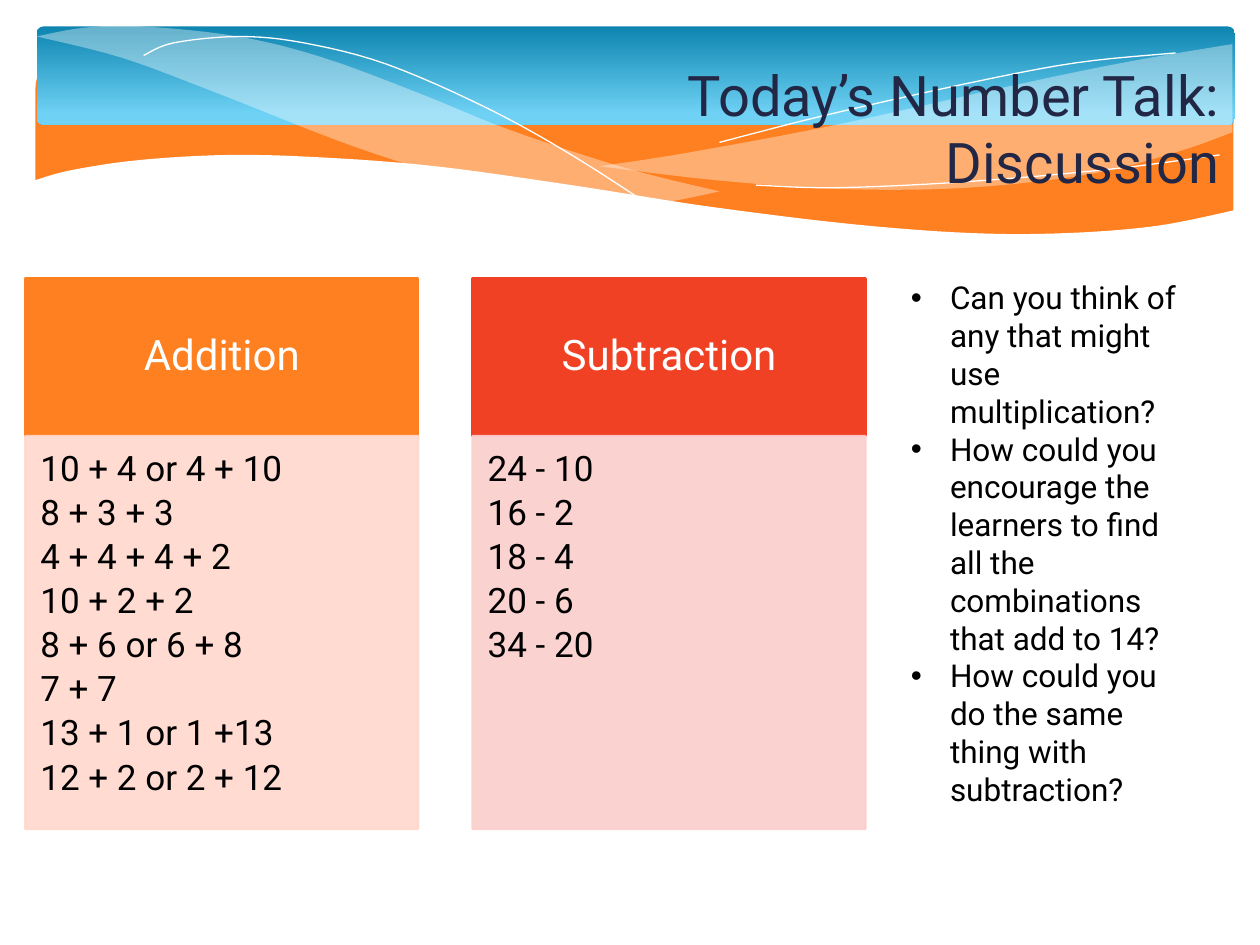
from dataclasses import dataclass

import pptx
import pptx.dml.color
import pptx.enum.shapes
import pptx.enum.text
import pptx.oxml
import pptx.oxml.ns
import pptx.util

Inches = pptx.util.Inches
Pt = pptx.util.Pt
Shape = pptx.enum.shapes.MSO_SHAPE
Align = pptx.enum.text.PP_ALIGN
Anchor = pptx.enum.text.MSO_ANCHOR
AutoSize = pptx.enum.text.MSO_AUTO_SIZE


@dataclass(frozen=True)
class Theme:
    """Colours, type sizes and font of the slide."""
    font: str = "Roboto"
    title: str = "212745"
    ink: str = "000000"
    white: str = "FFFFFF"
    orange: str = "FF8021"
    red: str = "F14124"
    peach: str = "FFD8CD"
    pink: str = "FACFCD"
    sky_top: str = "0D85B0"
    sky_bottom: str = "6FD2F5"
    title_size: int = 32
    header_size: int = 24
    sum_size: int = 20
    question_size: int = 18
    veil_opacity: int = 37
    card_opacity: int = 90
    border: float = 1.25


THEME = Theme()

VEILS = [
    [[(9.49, .14), (8.61, .29), (7.65, .49), (6.35, .78), (5.18, 1), (4.47, 1.11)],
     [(4.47, 1.11), (5.39, 1.22), (6.38, 1.29), (7.39, 1.28), (8.37, 1.17),
      (9.07, .99), (9.49, .84)]],
    [[(5.42, 1.31), (4.66, 1.12), (3.75, .82), (3.06, .54), (2.28, .25),
      (1.6, .08), (.84, 0), (.38, .01), (0, .08)],
     [(0, .08), (.68, .25), (1.46, .54), (2.51, .95), (3.39, 1.22),
      (4.24, 1.38), (4.75, 1.4), (5.02, 1.39), (5.42, 1.31)]],
]
THREADS = [
    [(.85, .23), (1.09, .13), (1.61, .08), (2.12, .13), (2.78, .3),
     (3.58, .65), (4.28, 1.04), (5.08, 1.56)],
    [(5.42, .92), (6.24, .71), (7.35, .46), (8.24, .29), (9.04, .21)],
    [(9.39, 1.02), (8.55, 1.13), (7.42, 1.23), (6.36, 1.28), (5.71, 1.26)],
]
WAVE = [
    [(9.59, 1.44), (8.91, 1.58), (8.18, 1.64), (7.42, 1.64), (6.48, 1.57),
     (5.34, 1.43), (4.25, 1.26), (3.17, 1.11), (2.27, 1.04), (1.53, 1.02),
     (.82, 1.06), (.28, 1.14), (-.01, 1.22)],
    [(-.01, 2), (9.59, 2)],
]

CARDS = [
    ("Addition", THEME.orange, THEME.peach,
     ["10 + 4 or 4 + 10", "8 + 3 + 3", "4 + 4 + 4 + 2", "10 + 2 + 2",
      "8 + 6 or 6 + 8", "7 + 7", "13 + 1 or 1 +13", "12 + 2 or 2 + 12"]),
    ("Subtraction", THEME.red, THEME.pink,
     ["24 - 10", "16 - 2", "18 - 4", "20 - 6", "34 - 20"]),
]
QUESTIONS = [
    "Can you think of any that might use multiplication?",
    "How could you encourage the learners to find all the combinations that add to 14?",
    "How could you do the same thing with subtraction?",
]


def rgb(code):
    """Turn a hex code into a colour."""
    return pptx.dml.color.RGBColor.from_string(code)


def apply(target, values):
    """Set each attribute named in a dict of format values."""
    for name, value in values.items():
        setattr(target, name, value)


def place(part, box):
    """Move a part to a box of inches."""
    apply(part, dict(zip(("left", "top", "width", "height"), map(Inches, box))))


def paint(fill, color, opacity=100):
    """Give a fill one colour, see-through where opacity is below 100."""
    fill.solid()
    fill.fore_color.rgb = rgb(color)
    if opacity < 100:
        tone = fill._xPr.find(".//" + pptx.oxml.ns.qn("a:srgbClr"))
        tone.append(pptx.oxml.parse_xml(
            f'<a:alpha {pptx.oxml.ns.nsdecls("a")} val="{opacity * 1000}"/>'))


def write(frame, lines, size, color, frame_format, paragraph_format):
    """Write one formatted paragraph for each line."""
    frame.text = "\n".join(lines)
    apply(frame, {"word_wrap": True, **frame_format})
    for paragraph in frame.paragraphs:
        apply(paragraph, paragraph_format)
        apply(paragraph.font, {"name": THEME.font, "size": Pt(size)})
        paragraph.font.color.rgb = rgb(color)


def add_panel(slide, kind, box, color, opacity=100):
    """Add a filled panel with a border of the same colour."""
    panel = slide.shapes.add_shape(kind, *map(Inches, box))
    panel.shadow.inherit = False
    paint(panel.fill, color, opacity)
    paint(panel.line.fill, color, opacity)
    panel.line.width = Pt(THEME.border)
    return panel


def smooth(knots, steps=6):
    """Return points on a Catmull-Rom curve through the knots."""
    padded = [knots[0], *knots, knots[-1]]
    points = [knots[0]]
    for a, b, c, d in zip(padded, padded[1:], padded[2:], padded[3:]):
        for step in range(1, steps + 1):
            t = step / steps
            points.append(tuple(
                (2 * q + (r - p) * t + (2 * p - 5 * q + 4 * r - s) * t ** 2
                 + (3 * q - p - 3 * r + s) * t ** 3) / 2
                for p, q, r, s in zip(a, b, c, d)))
    return points


def add_outline(slide, box, curves, closed):
    """Add a freeform made of smooth curves within a box."""
    points = [(Inches(box[0] + x), Inches(box[1] + y))
              for curve in curves for x, y in smooth(curve)]
    builder = slide.shapes.build_freeform(*points[0], scale=1.0)
    builder.add_line_segments(points[1:], close=closed)
    outline = builder.convert_to_shape()
    outline.shadow.inherit = False
    return outline


def add_banner(slide, box):
    """Draw the wavy two-colour banner."""
    left, top, width, height = box
    add_panel(slide, Shape.ROUNDED_RECTANGLE,
              (left, top + .23, width - .02, height - .44), THEME.orange)
    sky = add_panel(slide, Shape.ROUNDED_RECTANGLE, (left, top, width, .78), THEME.sky_top)
    sky.adjustments[0] = .07
    sky.line.fill.background()
    sky.fill.gradient()
    sky.fill.gradient_angle = 270
    tones = ((0, THEME.sky_top), (.9, THEME.sky_bottom))
    for stop, (position, color) in zip(sky.fill.gradient_stops, tones):
        stop.position = position
        stop.color.rgb = rgb(color)
    fields = [(veil, THEME.veil_opacity) for veil in VEILS] + [(WAVE, 100)]
    for curves, opacity in fields:
        field = add_outline(slide, box, curves, True)
        paint(field.fill, THEME.white, opacity)
        field.line.fill.background()
    for knots in THREADS:
        thread = add_outline(slide, box, [knots], False)
        thread.fill.background()
        paint(thread.line.fill, THEME.white)
        thread.line.width = Pt(0)


def add_card(slide, box, heading, header_color, body_color, sums):
    """Draw a header over a list of sums."""
    left, top, width, height = box
    header_height = 1.25
    header = add_panel(slide, Shape.RECTANGLE, (left, top, width, header_height), header_color)
    write(header.text_frame, [heading], THEME.header_size, THEME.white,
          {"vertical_anchor": Anchor.MIDDLE},
          {"alignment": Align.CENTER, "line_spacing": .9})
    body = add_panel(slide, Shape.RECTANGLE,
                     (left, top + header_height, width, height - header_height),
                     body_color, THEME.card_opacity)
    write(body.text_frame, sums, THEME.sum_size, THEME.ink,
          {"vertical_anchor": Anchor.TOP, "margin_left": Inches(.12),
           "margin_top": Inches(.12)},
          {"alignment": Align.LEFT, "line_spacing": .9, "space_after": Pt(3.6)})


def add_title(slide, box):
    """Place the title over the banner."""
    title = slide.shapes.title
    place(title, box)
    write(title.text_frame, ["Today’s Number Talk:\vDiscussion"],
          THEME.title_size, THEME.title,
          {"vertical_anchor": Anchor.MIDDLE, "auto_size": AutoSize.NONE},
          {"alignment": Align.RIGHT})
    slide.shapes._spTree.append(title._element)


def add_questions(slide, box):
    """Place the bulleted discussion questions."""
    questions = slide.placeholders[1]
    place(questions, box)
    write(questions.text_frame, QUESTIONS, THEME.question_size, THEME.ink,
          {"auto_size": AutoSize.SHAPE_TO_FIT_TEXT}, {"space_before": Pt(0)})
    for paragraph in questions.text_frame.paragraphs:
        properties = paragraph._p.get_or_add_pPr()
        properties.set("marL", str(Inches(.31)))
        properties.set("indent", str(-Inches(.31)))


def main():
    """Build and save the slide."""
    deck = pptx.Presentation()
    apply(deck, {"slide_width": Inches(10), "slide_height": Inches(7.5)})
    slide = deck.slides.add_slide(deck.slide_layouts[1])
    add_banner(slide, (.29, .21, 9.51, 2))
    add_title(slide, (1.42, .33, 8.36, 1.37))
    add_questions(slide, (7.13, 2.16, 2.43, 4.34))
    for index, card in enumerate(CARDS):
        add_card(slide, (.2 + 3.55 * index, 2.21, 3.12, 4.37), *card)
    deck.save("out.pptx")


if __name__ == "__main__":
    main()
